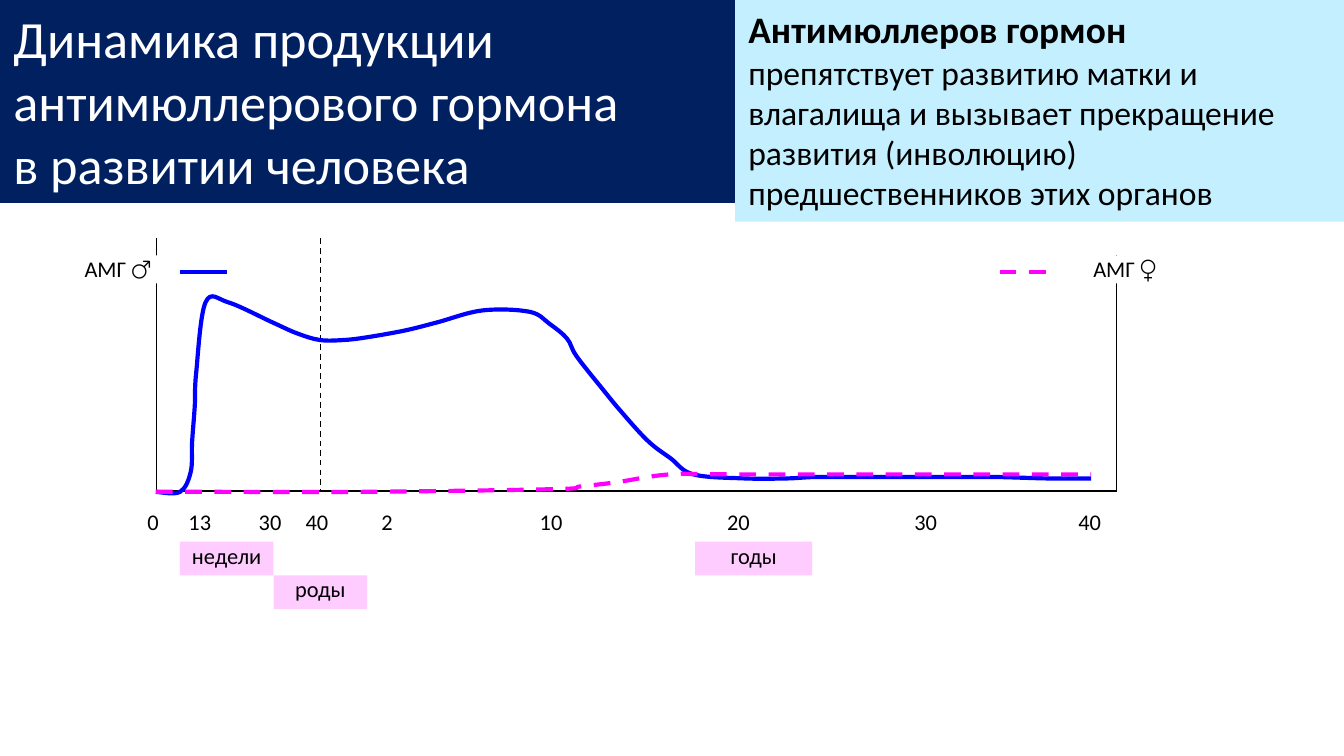
from pptx import Presentation
from pptx.dml.color import RGBColor
from pptx.enum.dml import MSO_LINE
from pptx.enum.shapes import MSO_CONNECTOR, MSO_SHAPE
from pptx.enum.text import MSO_ANCHOR, PP_ALIGN
from pptx.oxml.ns import qn
from pptx.util import Inches, Pt
from lxml.etree import SubElement

W = 10
H = W * 9 / 16
LEFT, COL = 0.99, 6.97 / 40
TOP, ROW = 3.78, 1.88 / 7.5
FONT = "Calibri"
BLACK, WHITE, NAVY, SKY = "000000", "FFFFFF", "002060", "C4EFFF"
PINK, BLUE, MAGENTA = "FFCCFF", "0000FF", "FF00FF"

TITLE = ["Динамика продукции", "антимюллерового гормона", "в развитии человека"]
NOTE = ("препятствует развитию матки и влагалища и вызывает прекращение "
        "развития (инволюцию) предшественников этих органов")
TICKS = [(0, "0"), (2, "13"), (5, "30"), (7, "40"), (10, "2"), (17, "10"),
         (25, "20"), (33, "30"), (40, "40")]
PERIODS = [(2, 1, 4, "недели"), (6, 2, 4, "роды"), (24, 1, 5, "годы")]
LEGEND = [(-3, "АМГ ♂"), (40, "АМГ ♀")]

MALE = [(1.16, 3.66), (1.34, 3.66), (1.42, 3.51), (1.43, 3.29), (1.45, 3.02),
        (1.46, 2.78), (1.53, 2.25), (1.7, 2.25), (2.03, 2.4), (2.21, 2.48),
        (2.38, 2.53), (2.56, 2.53), (2.73, 2.51), (3.01, 2.46), (3.25, 2.4),
        (3.59, 2.31), (3.94, 2.32), (4.09, 2.41), (4.22, 2.52), (4.29, 2.65),
        (4.48, 2.89), (4.62, 3.06), (4.82, 3.28), (4.99, 3.41), (5.16, 3.53),
        (5.54, 3.56), (5.86, 3.56), (6.06, 3.55), (6.37, 3.55), (6.7, 3.55),
        (6.94, 3.55), (7.19, 3.55), (7.43, 3.55), (7.79, 3.56), (8.12, 3.56)]
FEMALE = [(1.16, 3.66), (1.51, 3.66), (2.73, 3.66), (4.13, 3.64), (4.32, 3.62),
          (4.58, 3.59), (4.99, 3.53), (5.51, 3.53), (8.12, 3.53)]


def rgb(color):
    return RGBColor.from_string(color)


def x_at(col):
    return Inches(LEFT + col * COL)


def y_at(row):
    return Inches(TOP + row * ROW)


def write(tf, text, size=12, color=BLACK, bold=False, align=PP_ALIGN.LEFT):
    p = tf.paragraphs[0] if not tf.text else tf.add_paragraph()
    p.alignment = align
    p.space_before = Pt(0)
    r = p.add_run()
    r.text = text
    r.font.name, r.font.size, r.font.bold = FONT, Pt(size), bold
    r.font.color.rgb = rgb(color)


def fill_with(sp, color):
    sp.fill.solid()
    sp.fill.fore_color.rgb = rgb(color)


def style_line(sp, color, width, dashed):
    sp.line.color.rgb = rgb(color)
    sp.line.width = Pt(width)
    if dashed:
        sp.line.dash_style = MSO_LINE.DASH


def add_box(s, x, y, w, h, color):
    sp = s.shapes.add_shape(MSO_SHAPE.RECTANGLE, x, y, w, h)
    sp.shadow.inherit = False
    fill_with(sp, color)
    sp.line.fill.background()
    sp.text_frame.word_wrap = True
    sp.text_frame.vertical_anchor = MSO_ANCHOR.TOP
    return sp


def add_label(s, col, row, cols, h, text, color=WHITE):
    sp = add_box(s, x_at(col), y_at(row), Inches(cols * COL), Inches(h), color)
    tf = sp.text_frame
    tf.margin_left = tf.margin_right = tf.margin_top = tf.margin_bottom = 0
    write(tf, text, align=PP_ALIGN.CENTER)


def add_line(s, start, end, color=BLACK, width=0.75, dashed=False):
    (c1, r1), (c2, r2) = start, end
    sp = s.shapes.add_connector(MSO_CONNECTOR.STRAIGHT,
                                x_at(c1), y_at(r1), x_at(c2), y_at(r2))
    style_line(sp, color, width, dashed)
    SubElement(sp._element.spPr, qn("a:effectLst"))


def add_curve(s, knots, color, dashed=False):
    pts = [(Inches(x), Inches(y)) for x, y in knots]
    builder = s.shapes.build_freeform(*pts[0])
    builder.add_line_segments(pts[1:], close=False)
    sp = builder.convert_to_shape()
    sp.shadow.inherit = False
    sp.fill.background()
    style_line(sp, color, 2.25, dashed)
    padded = [pts[0], *pts, pts[-1]]
    segments = list(sp._element.iter(qn("a:lnTo")))
    for seg, p0, p1, p2, p3 in zip(segments, padded, pts, pts[1:], padded[3:]):
        seg.tag = qn("a:cubicBezTo")
        seg.clear()
        first = [b + (c - a) / 6 for a, b, c in zip(p0, p1, p2)]
        second = [c - (d - b) / 6 for b, c, d in zip(p1, p2, p3)]
        for x, y in (first, second, p2):
            SubElement(seg, qn("a:pt"), x=str(round(x - sp.left)),
                       y=str(round(y - sp.top)))


def add_title(s):
    sp = s.shapes.title
    sp.left, sp.top, sp.width, sp.height = 0, 0, Inches(W), Inches(1.51)
    fill_with(sp, NAVY)
    tf = sp.text_frame
    tf.vertical_anchor = MSO_ANCHOR.TOP
    for text in TITLE:
        write(tf, text, size=28, color=WHITE)


def add_note(s):
    x = Inches(5.47)
    sp = add_box(s, x, 0, Inches(W) - x, Inches(1.65), SKY)
    write(sp.text_frame, "Антимюллеров гормон", size=20, bold=True)
    write(sp.text_frame, NOTE, size=18)


def add_graph(s):
    add_line(s, (1, -8), (1, -0.5))
    add_line(s, (1, -0.5), (42, -0.5))
    add_line(s, (42, -0.5), (42, -7.5))
    add_line(s, (8, -8), (8, -0.5), dashed=True)
    for col, text in TICKS:
        add_label(s, col, 0, 1.7, 0.21, text)
    for col, row, cols, text in PERIODS:
        add_label(s, col, row, cols, ROW, text, PINK)
    add_curve(s, MALE, BLUE)
    add_curve(s, FEMALE, MAGENTA, dashed=True)
    for col, text in LEGEND:
        add_label(s, col, -7.5, 4.7, 0.21, text)
    add_line(s, (4, -7), (2, -7), BLUE, 2.25)
    add_line(s, (37, -7), (39, -7), MAGENTA, 2.25, dashed=True)


def main():
    prs = Presentation()
    prs.slide_width, prs.slide_height = Inches(W), Inches(H)
    s = prs.slides.add_slide(prs.slide_layouts[5])
    add_title(s)
    add_graph(s)
    add_note(s)
    prs.save("out.pptx")


if __name__ == "__main__":
    main()
